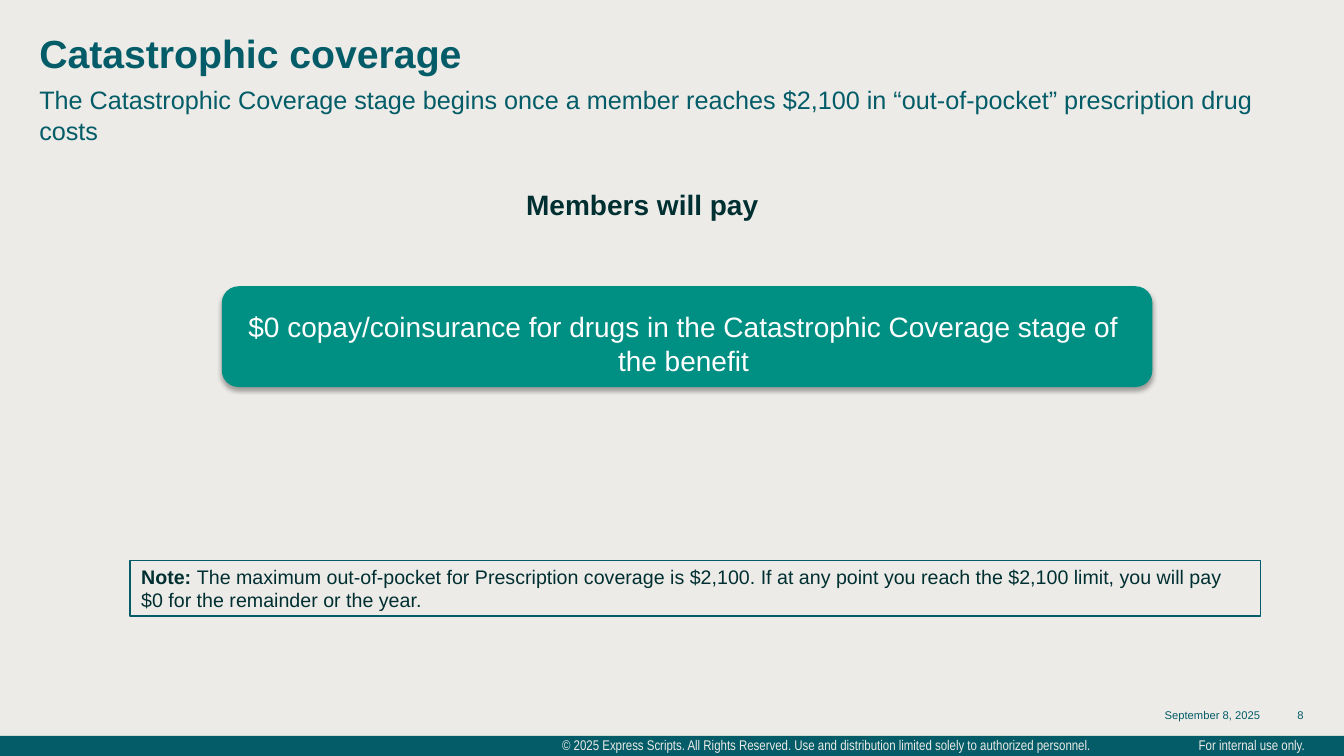
from lxml.etree import SubElement
from pptx import Presentation
from pptx.dml.color import RGBColor
from pptx.enum.shapes import MSO_SHAPE
from pptx.enum.text import MSO_ANCHOR, PP_ALIGN
from pptx.oxml.ns import qn
from pptx.util import Inches, Pt

TEAL = RGBColor(0x03, 0x5C, 0x67)
GREEN = RGBColor(0x00, 0x8F, 0x83)
DARK = RGBColor(0x00, 0x2F, 0x32)
SAND = RGBColor(0xED, 0xEB, 0xE7)
WHITE = RGBColor(0xFF, 0xFF, 0xFF)


def add_panel(slide, kind, left, top, width, height, fill, outline=None):
    shape = slide.shapes.add_shape(
        kind, Inches(left), Inches(top), Inches(width), Inches(height))
    shape.shadow.inherit = False
    shape.fill.solid()
    shape.fill.fore_color.rgb = fill
    if outline is None:
        shape.line.fill.background()
    else:
        shape.line.color.rgb = outline
        shape.line.width = Pt(1)
    return shape


def add_soft_shadow(shape):
    effects = shape._element.spPr.find(qn("a:effectLst"))
    shadow = SubElement(effects, qn("a:outerShdw"), blurRad=str(Pt(3.5)),
                        dist=str(Pt(2.2)), dir="5400000", rotWithShape="0")
    color = SubElement(shadow, qn("a:srgbClr"), val="000000")
    SubElement(color, qn("a:alpha"), val="32000")


def add_text(slide, left, top, width, height, text, size, color, bold=False,
             font="Arial", align=PP_ALIGN.LEFT, anchor=MSO_ANCHOR.TOP,
             line_spacing=None):
    box = slide.shapes.add_textbox(
        Inches(left), Inches(top), Inches(width), Inches(height))
    frame = box.text_frame
    frame.word_wrap = True
    frame.vertical_anchor = anchor
    frame.margin_left = frame.margin_right = 0
    frame.margin_top = frame.margin_bottom = 0
    frame.text = text
    paragraph = frame.paragraphs[0]
    paragraph.alignment = align
    paragraph.line_spacing = line_spacing
    paragraph.font.name = font
    paragraph.font.size = Pt(size)
    paragraph.font.color.rgb = color
    paragraph.font.bold = bold
    for run in paragraph.runs:
        format_run(run, size, color, bold, font)
    return paragraph


def format_run(run, size, color, bold=False, font="Arial"):
    run.font.name = font
    run.font.size = Pt(size)
    run.font.color.rgb = color
    run.font.bold = bold


def add_footer(slide):
    add_panel(slide, MSO_SHAPE.RECTANGLE, 0, 7.3, 13.33, 0.2, TEAL)
    for left, width, text in (
        (11.63, 1.31, "For internal use only."),
        (0.39, 10.42, "© 2025 Express Scripts. All Rights Reserved. Use and "
                      "distribution limited solely to authorized personnel."),
    ):
        add_text(slide, left, 7.3, width, 0.2, text, 10, SAND,
                 font="Arial Narrow", align=PP_ALIGN.RIGHT,
                 anchor=MSO_ANCHOR.MIDDLE, line_spacing=0.9)
    for left, width, text in ((10.81, 1.69, "September 8, 2025"), (12.5, 0.43, "8")):
        add_text(slide, left, 6.96, width, 0.2, text, 8, TEAL,
                 align=PP_ALIGN.RIGHT, anchor=MSO_ANCHOR.BOTTOM)


def add_note(slide):
    add_panel(slide, MSO_SHAPE.RECTANGLE, 1.29, 5.56, 11.21, 0.55, SAND, TEAL)
    paragraph = add_text(slide, 1.4, 5.6, 10.85, 0.47, "Note: ", 14, DARK, bold=True)
    run = paragraph.add_run()
    run.text = ("The maximum out-of-pocket for Prescription coverage is $2,100. "
                "If at any point you reach the $2,100 limit, you will pay "
                "$0 for the remainder or the year.")
    format_run(run, 14, DARK)


def main():
    presentation = Presentation()
    presentation.slide_width = Inches(13.33)
    presentation.slide_height = Inches(7.5)
    slide = presentation.slides.add_slide(presentation.slide_layouts[6])
    slide.background.fill.solid()
    slide.background.fill.fore_color.rgb = SAND

    add_footer(slide)
    add_text(slide, 0.39, 0.32, 12.54, 0.52, "Catastrophic coverage",
             28, TEAL, bold=True, line_spacing=0.95)
    add_text(slide, 0.39, 0.84, 12.54, 1.02,
             "The Catastrophic Coverage stage begins once a member reaches "
             "$2,100 in “out-of-pocket” prescription drug costs", 18, TEAL)
    add_text(slide, 4.18, 1.86, 4.38, 0.34, "Members will pay", 20, DARK,
             bold=True, align=PP_ALIGN.CENTER)
    copay_panel = add_panel(
        slide, MSO_SHAPE.ROUNDED_RECTANGLE, 2.2, 2.84, 9.23, 1, GREEN)
    add_soft_shadow(copay_panel)
    add_text(slide, 2.36, 3.07, 8.84, 0.67,
             "$0 copay/coinsurance for drugs in the Catastrophic Coverage "
             "stage of the benefit", 20, WHITE, align=PP_ALIGN.CENTER)
    add_note(slide)
    presentation.save("out.pptx")


if __name__ == "__main__":
    main()
